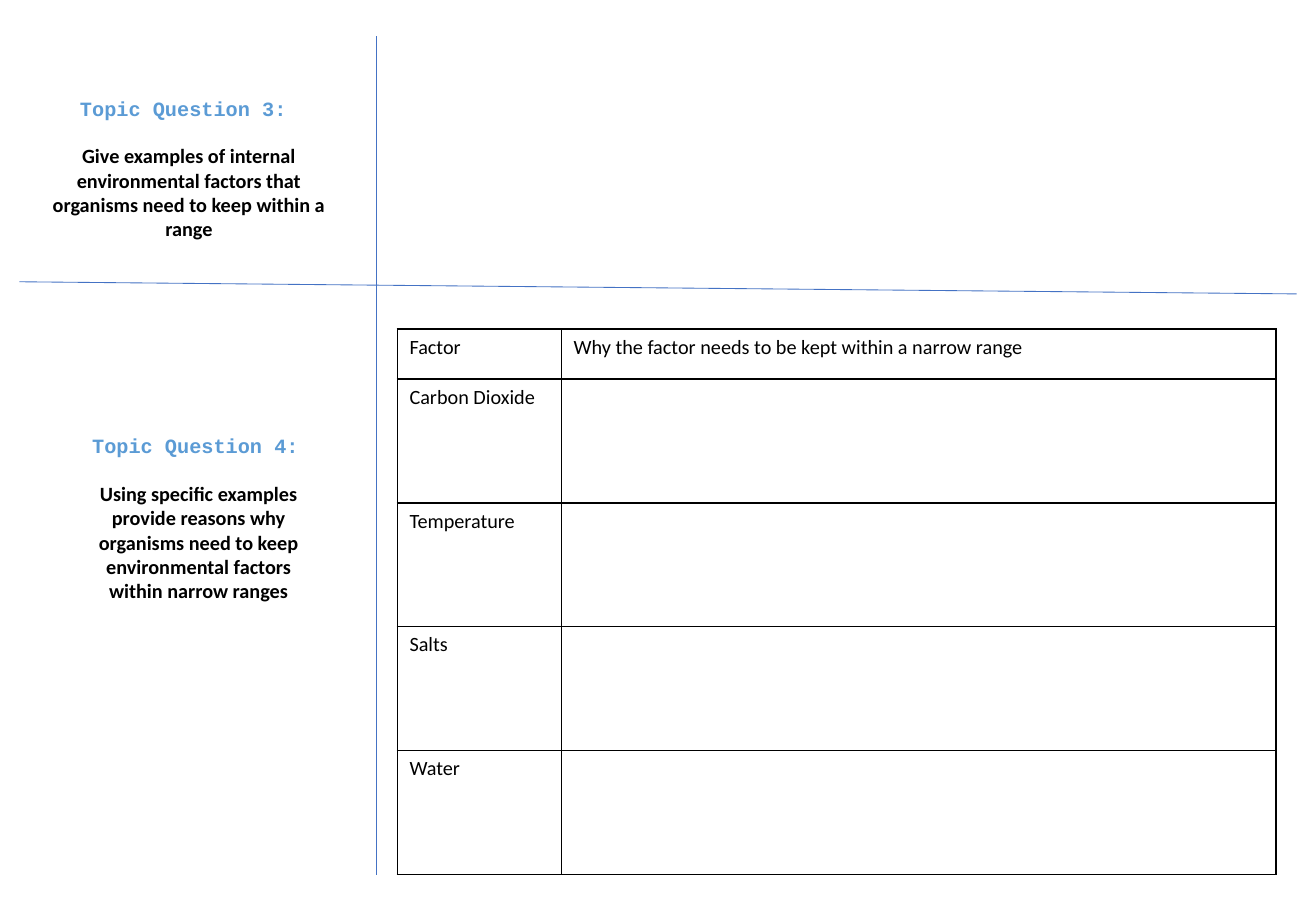
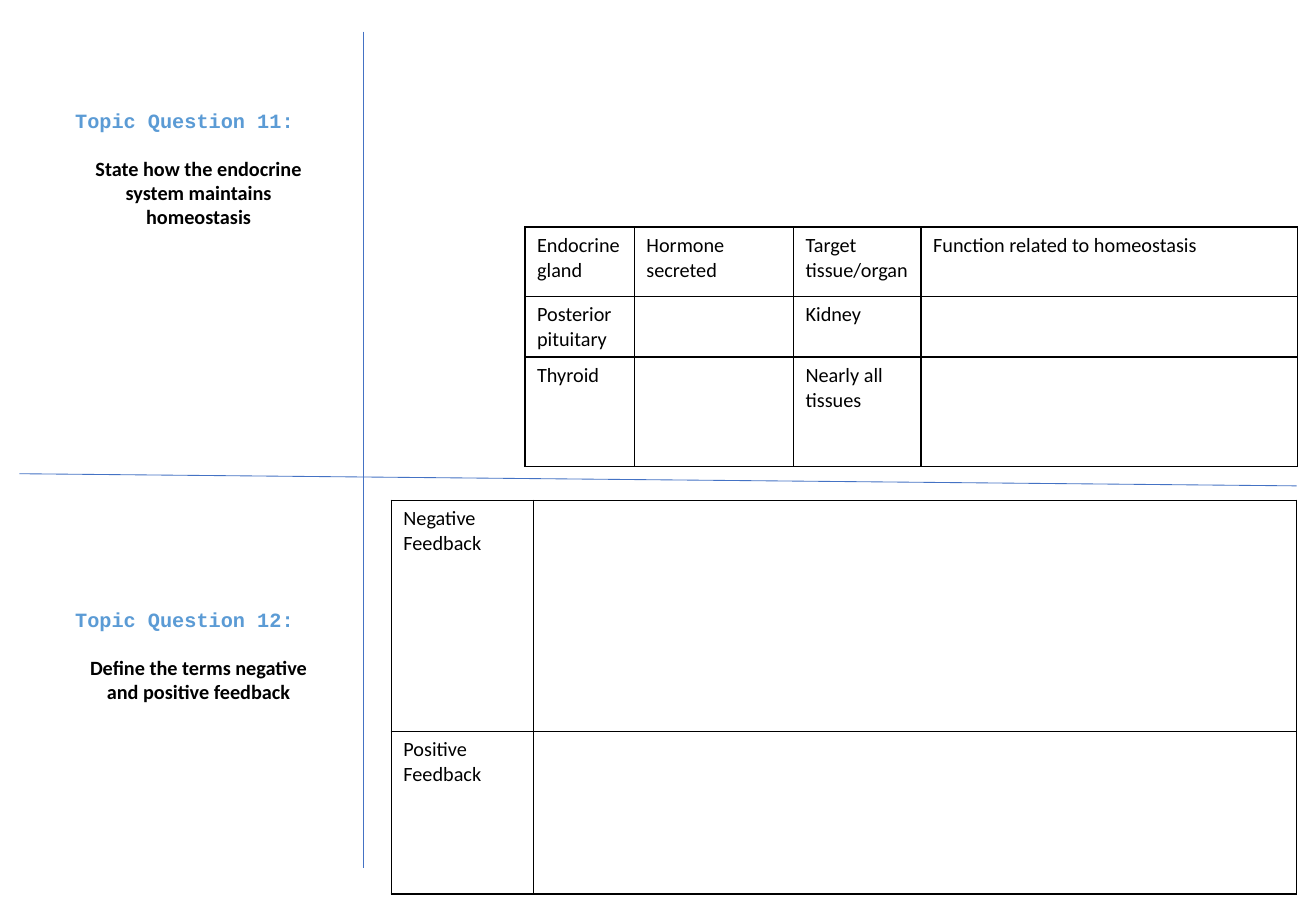
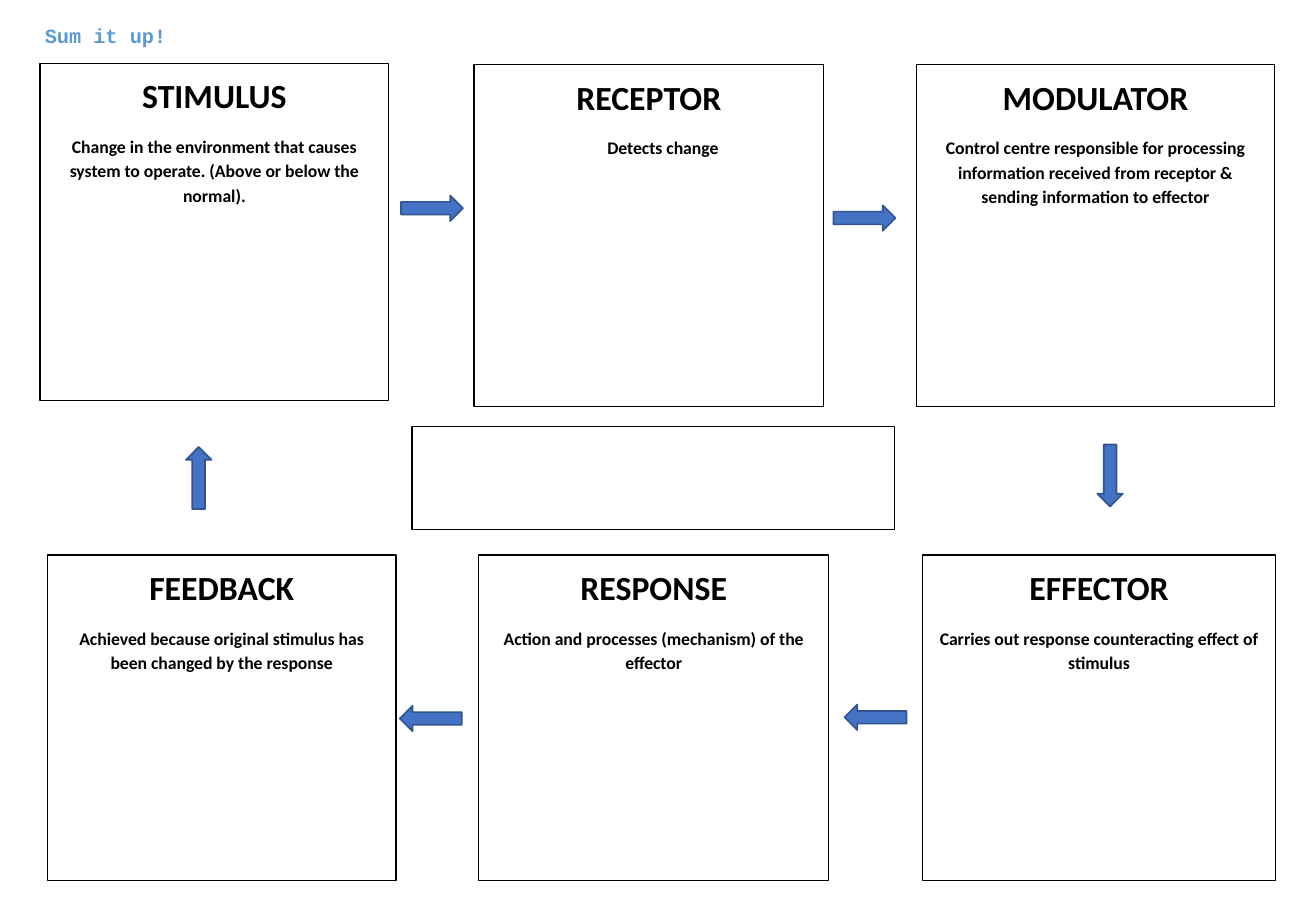
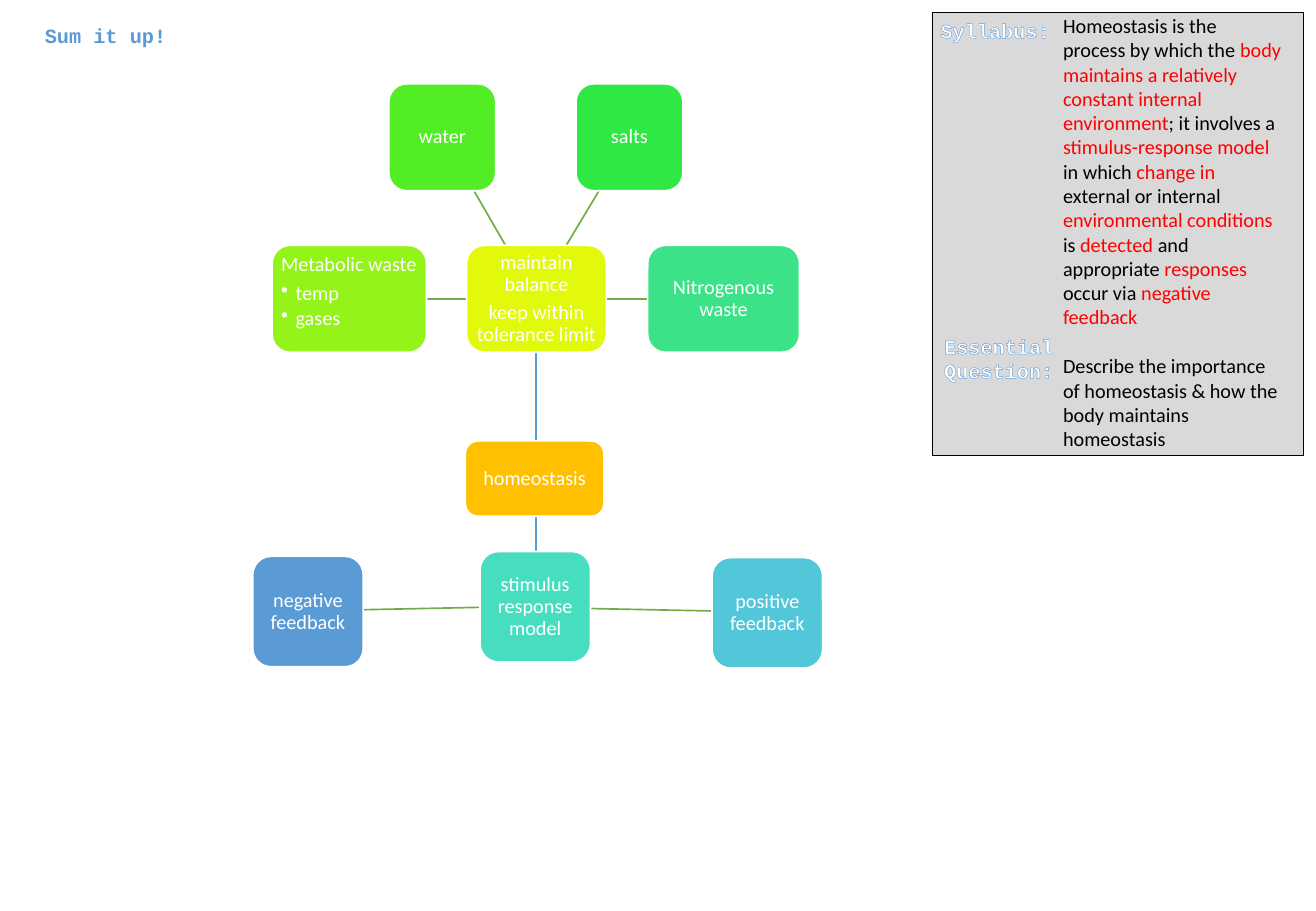
from dataclasses import dataclass

from lxml.etree import SubElement
from pptx import Presentation
from pptx.dml.color import RGBColor
from pptx.enum.shapes import MSO_CONNECTOR, MSO_SHAPE as Preset
from pptx.enum.text import MSO_ANCHOR as Anchor, PP_ALIGN as Align
from pptx.oxml import parse_xml
from pptx.oxml.ns import nsdecls, qn
from pptx.util import Pt

EMU_PER_PX = 9144


@dataclass(frozen=True)
class Theme:
    """Colours, fonts and sizes shared by all slides."""
    ink: str = "000000"
    paper: str = "FFFFFF"
    accent: str = "4472C4"
    accent_edge: str = "325491"
    label: str = "5B9BD5"
    branch: str = "70AD47"
    panel: str = "D9D9D9"
    key_phrase: str = "FF0000"
    body_font: str = "Calibri"
    label_font: str = "Courier New"
    body_size: float = 12
    heading_size: float = 20
    detail_size: float = 10.5
    outline: float = 0.8
    hairline: float = 0.5
    frame_line: float = 0.75
    rule: float = 1


THEME = Theme()


@dataclass(frozen=True)
class Box:
    """A rectangle in px."""
    left: int
    top: int
    width: int
    height: int

    def inner(self, left, top, width, height):
        """Return a box placed relative to this one."""
        return Box(self.left + left, self.top + top, width, height)

    def emu(self):
        """Return left, top, width and height in EMU."""
        return [px(n) for n in (self.left, self.top, self.width, self.height)]


PAGE = Box(0, 0, 1083, 750)


def px(length):
    """Turn px into EMU."""
    return length * EMU_PER_PX


def rgb(colour):
    """Turn a hex string into a colour."""
    return RGBColor.from_string(colour)


def line_xml(tag, colour, points):
    """Build a solid line element."""
    return parse_xml(
        f'<a:{tag} {nsdecls("a")} w="{Pt(points)}"><a:solidFill>'
        f'<a:srgbClr val="{colour}"/></a:solidFill></a:{tag}>')


def write(frame, text, *, font=THEME.body_font, size=THEME.body_size,
          colour=THEME.ink, bold=False, align=Align.LEFT, before=0, after=0,
          spacing=None, indent=0, bullet=None, outline=None, same_line=False):
    """Add a paragraph, or a run of the last one, in the given format."""
    paragraph = frame.paragraphs[-1]
    if not same_line:
        if paragraph.runs:
            paragraph = frame.add_paragraph()
        paragraph.alignment = align
        paragraph.line_spacing = spacing
        paragraph.space_before, paragraph.space_after = Pt(before), Pt(after)
        properties = paragraph._p.get_or_add_pPr()
        properties.set("marL", str(px(indent)))
        if bullet:
            properties.set("indent", str(-px(indent)))
            SubElement(properties, qn("a:buChar"), char=bullet)
    run = paragraph.add_run()
    run.text = text
    run.font.name, run.font.size, run.font.bold = font, Pt(size), bold
    run.font.color.rgb = rgb(colour)
    if outline:
        run._r.get_or_add_rPr().insert(
            0, line_xml("ln", outline, THEME.outline))


def write_label(frame, text, **style):
    """Write an outlined heading in the label font."""
    write(frame, text, **{
        "font": THEME.label_font, "bold": True, "colour": THEME.label,
        "outline": THEME.label, **style})


def add_text_frame(slide, box):
    """Add a wrapping text box and return its frame."""
    frame = slide.shapes.add_textbox(*box.emu()).text_frame
    frame.word_wrap = True
    return frame


def add_panel(slide, preset, box, fill, edge, weight, anchor=Anchor.TOP):
    """Add a filled shape with a plain outline."""
    panel = slide.shapes.add_shape(preset, *box.emu())
    panel.shadow.inherit = False
    panel.fill.solid()
    panel.fill.fore_color.rgb = rgb(fill)
    panel.line.color.rgb = rgb(edge)
    panel.line.width = Pt(weight)
    panel.text_frame.word_wrap = True
    panel.text_frame.vertical_anchor = anchor
    return panel


def add_line(slide, box, start, end, colour, weight):
    """Draw a straight line between two points of a box."""
    ends = [px(n) for x, y in (start, end) for n in (box.left + x, box.top + y)]
    line = slide.shapes.add_connector(MSO_CONNECTOR.STRAIGHT, *ends)
    line.line.color.rgb = rgb(colour)
    line.line.width = Pt(weight)
    SubElement(line.element.spPr, qn("a:effectLst"))


def add_dividers(slide, box, column, row):
    """Draw the margin line and the slightly sloping row line."""
    for start, end in (((column, 0), (column, box.height)),
                       ((0, row), (box.width, row + 10))):
        add_line(slide, box, start, end, THEME.accent, THEME.hairline)


def add_question(slide, box, number, prompt, indent=0):
    """Write a numbered topic question and its prompt."""
    frame = add_text_frame(slide, box)
    write_label(frame, f"Topic Question {number}:", after=14, indent=indent)
    write(frame, prompt, bold=True, align=Align.CENTER)


def add_grid(slide, box, widths, heights, rows):
    """Add a black-ruled table to be filled in."""
    grid = slide.shapes.add_table(len(heights), len(widths), *box.emu()).table
    grid.first_row = grid.horz_banding = False
    for column, width in zip(grid.columns, widths):
        column.width = px(width)
    for row, height, texts in zip(grid.rows, heights, rows):
        row.height = px(height)
        for cell, text in zip(row.cells, texts):
            cell.fill.background()
            for place, side in enumerate(("lnL", "lnR", "lnT", "lnB")):
                cell._tc.get_or_add_tcPr().insert(
                    place, line_xml(side, THEME.ink, THEME.rule))
            if text:
                write(cell.text_frame, text)


def add_summary_title(slide):
    """Write the title shared by the summary slides."""
    write_label(add_text_frame(slide, PAGE.inner(27, 14, 875, 30)), "Sum it up!")


def add_feedback_loop(slide, box):
    """Draw the stimulus-response steps, the empty centre and the arrows."""
    steps = (
        ((0, 0, 287, 278), "STIMULUS",
         "Change in the environment that causes system to operate. "
         "(Above or below the normal).", {}),
        ((357, 1, 288, 282), "RECEPTOR", "Detects change",
         {"align": Align.LEFT, "indent": 100}),
        ((721, 1, 295, 282), "MODULATOR",
         "Control centre responsible for processing information received "
         "from receptor & sending information to effector", {}),
        ((726, 405, 291, 268), "EFFECTOR",
         "Carries out response counteracting effect of stimulus", {}),
        ((361, 405, 288, 268), "RESPONSE",
         "Action and processes (mechanism) of the effector", {}),
        ((6, 405, 287, 268), "FEEDBACK",
         "Achieved because original stimulus has been changed by the response",
         {}),
    )
    frame_style = (THEME.paper, THEME.ink, THEME.frame_line)
    step_style = {"bold": True, "align": Align.CENTER, "spacing": 1.15, "after": 10}
    for place, heading, detail, style in steps:
        step = add_panel(slide, Preset.RECTANGLE, box.inner(*place), *frame_style)
        write(step.text_frame, heading, size=THEME.heading_size, **step_style)
        write(step.text_frame, detail, size=THEME.detail_size,
              **{**step_style, **style})
    add_panel(slide, Preset.RECTANGLE, box.inner(306, 299, 397, 85), *frame_style)
    for left, top, turn in ((297, 109, 0), (653, 117, 0), (855, 329, 90),
                            (662, 528, 180), (296, 529, 180), (105, 331, 270)):
        arrow = add_panel(slide, Preset.RIGHT_ARROW, box.inner(left, top, 51, 21),
                          THEME.accent, THEME.accent_edge, THEME.rule)
        arrow.rotation = turn


def add_concept_map(slide, box):
    """Draw the homeostasis map with its links and nodes."""
    links = (
        (THEME.label, (233, 356), (233, 385)),
        (THEME.label, (233, 294), (233, 221)),
        (THEME.branch, (176, 177), (143, 177)),
        (THEME.branch, (208, 133), (182, 88)),
        (THEME.branch, (258, 133), (285, 88)),
        (THEME.branch, (290, 177), (325, 177)),
        (THEME.branch, (278, 432), (378, 434)),
        (THEME.branch, (187, 431), (91, 433)),
    )
    nodes = (
        ((175, 294, 114, 62), "FFC000", ["homeostasis"], []),
        ((176, 133, 115, 88), "E3F90C",
         ["maintain balance", "keep within tolerance limit"], []),
        ((16, 133, 127, 88), "94F319", ["Metabolic waste"], ["temp", "gases"]),
        ((112, 0, 88, 88), "52ED24", ["water"], []),
        ((266, 0, 88, 88), "30E845", ["salts"], []),
        ((325, 133, 125, 88), "3BE287", ["Nitrogenous waste"], []),
        ((187, 385, 91, 91), "46DEBF", ["stimulus response model"], []),
        ((378, 390, 91, 91), "51C7D9", ["positive feedback"], []),
        ((0, 389, 91, 91), "5B9BD5", ["negative feedback"], []),
    )
    for colour, start, end in links:
        add_line(slide, box, start, end, colour, THEME.rule)
    for place, fill, ideas, examples in nodes:
        node = add_panel(slide, Preset.ROUNDED_RECTANGLE, box.inner(*place), fill,
                         THEME.paper, THEME.rule,
                         Anchor.TOP if examples else Anchor.MIDDLE)
        frame = node.text_frame
        frame.margin_left = frame.margin_right = px(3)
        frame.margin_top = frame.margin_bottom = px(3)
        for idea in ideas:
            write(frame, idea, colour=THEME.paper, spacing=0.9, after=4,
                  align=Align.LEFT if examples else Align.CENTER)
        for example in examples:
            write(frame, example, colour=THEME.paper, spacing=0.9, after=2,
                  indent=12, bullet="•")


def add_syllabus(slide, box):
    """Add the grey syllabus panel with its labels and text."""
    add_panel(slide, Preset.RECTANGLE, box, THEME.panel, THEME.ink, THEME.hairline)
    phrases = (
        "Homeostasis is the process by which the ",
        "body maintains a relatively constant internal environment",
        "; it involves a ", "stimulus-response model ",
        "in which ", "change in ",
        "external or internal ", "environmental conditions ",
        "is ", "detected", " and appropriate ", "responses",
        " occur via ", "negative feedback",
    )
    frame = add_text_frame(slide, box.inner(98, -4, 200, 369))
    for order, phrase in enumerate(phrases):
        write(frame, phrase, same_line=order > 0,
              colour=THEME.key_phrase if order % 2 else THEME.ink)
    write(frame, "Describe the importance of homeostasis & how the body "
          "maintains homeostasis", before=14.6)
    for place, lines in (((0, 260, 112, 50), ("Essential", "Question:")),
                         ((-3, 0, 112, 30), ("Syllabus:",))):
        frame = add_text_frame(slide, box.inner(*place))
        for line in lines:
            write_label(frame, line, colour=THEME.paper)


def build_factors(slide):
    """Build the slide on environmental factors."""
    add_dividers(slide, PAGE.inner(16, 30, 1051, 690), 294, 202)
    add_question(slide, PAGE.inner(27, 74, 257, 130), 3,
                 "Give examples of internal environmental factors that "
                 "organisms need to keep within a range", indent=29)
    add_question(slide, PAGE.inner(66, 352, 195, 150), 4,
                 "Using specific examples provide reasons why organisms need "
                 "to keep environmental factors within narrow ranges")
    factors = ("Carbon Dioxide", "Temperature", "Salts", "Water")
    add_grid(slide, PAGE.inner(327, 271, 723, 449), (135, 588),
             (41, *[102] * len(factors)),
             [("Factor", "Why the factor needs to be kept within a narrow range"),
              *((factor, "") for factor in factors)])


def build_endocrine(slide):
    """Build the slide on the endocrine system and feedback."""
    add_dividers(slide, PAGE.inner(16, 26, 1051, 689), 283, 364)
    add_question(slide, PAGE.inner(52, 84, 223, 110), 11,
                 "State how the endocrine system maintains homeostasis")
    add_question(slide, PAGE.inner(52, 495, 223, 90), 12,
                 "Define the terms negative and positive feedback")
    add_grid(slide, PAGE.inner(432, 187, 636, 197), (90, 131, 105, 310),
             (57, 50, 90),
             [("Endocrine gland", "Hormone secreted", "Target tissue/organ",
               "Function related to homeostasis"),
              ("Posterior pituitary", "", "Kidney", ""),
              ("Thyroid", "", "Nearly all tissues", "")])
    add_grid(slide, PAGE.inner(322, 412, 745, 324), (117, 628), (190, 134),
             [("Negative Feedback", ""), ("Positive Feedback", "")])


def build_loop_summary(slide):
    """Build the feedback loop summary."""
    add_summary_title(slide)
    add_feedback_loop(slide, PAGE.inner(33, 52, 1017, 673))


def build_map_summary(slide):
    """Build the concept map summary."""
    add_summary_title(slide)
    add_concept_map(slide, PAGE.inner(208, 69, 469, 481))
    add_syllabus(slide, PAGE.inner(767, 10, 306, 365))


def main():
    """Build and save the presentation."""
    deck = Presentation()
    deck.slide_width, deck.slide_height = px(PAGE.width), px(PAGE.height)
    for build in (build_factors, build_endocrine,
                  build_loop_summary, build_map_summary):
        build(deck.slides.add_slide(deck.slide_layouts[6]))
    deck.save("out.pptx")


if __name__ == "__main__":
    main()
